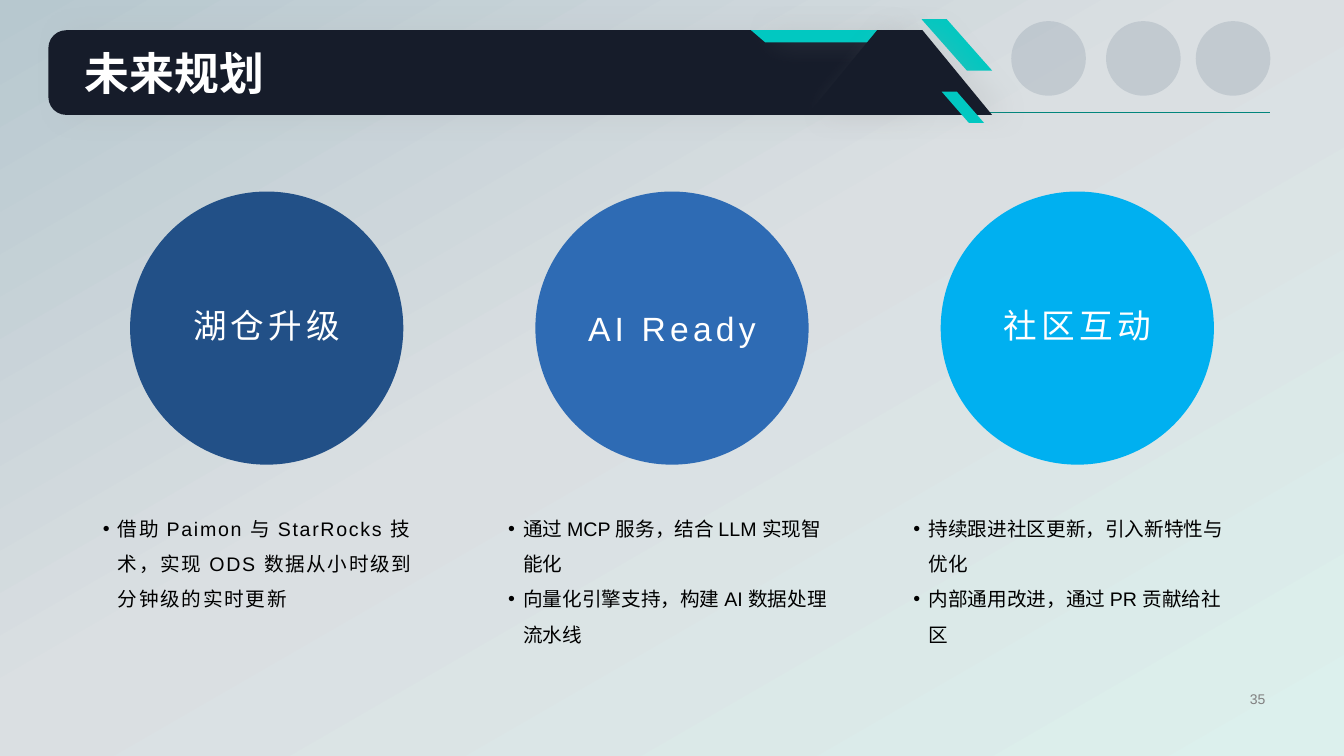
from copy import deepcopy
from pptx import Presentation, util as u
from pptx.dml.color import RGBColor
from pptx.enum import shapes as sh, text as tx
from pptx.oxml import parse_xml
from pptx.oxml.ns import nsdecls, qn

PX = 9144  # 100 px to the inch
DARK, TEAL, GREY = "161C2A", "01C8C1", "66788C"
rgb = RGBColor.from_string

deck = Presentation()
deck.slide_width, deck.slide_height = 1333 * PX, 750 * PX
slide = deck.slides.add_slide(deck.slide_layouts[6])
items = slide.shapes


def paint(shape, color, alpha=None, glow=False):
    """Fill a shape without outline, with optional opacity and soft shadow."""
    shape.shadow.inherit = False
    shape.line.fill.background()
    shape.fill.solid()
    shape.fill.fore_color.rgb = rgb(color)
    props = shape.element.spPr
    if alpha:
        tint = props.find(qn("a:solidFill"))[0]
        tint.append(parse_xml(f'<a:alpha {nsdecls("a")} val="{alpha * 1000}"/>'))
    if glow:
        props.find(qn("a:effectLst")).append(parse_xml(
            f'<a:outerShdw {nsdecls("a")} blurRad="254000" dist="127000" dir="0">'
            '<a:srgbClr val="A6A6A6"><a:alpha val="20000"/></a:srgbClr></a:outerShdw>'))


def write(lines, left, top, wide, high, size=14, color="000000", bold=False,
          align="LEFT", pad=5, gap=0, bullet=False, wrap=True, anchor="TOP"):
    frame = items.add_textbox(left * PX, top * PX, wide * PX, high * PX).text_frame
    frame.word_wrap = wrap
    frame.vertical_anchor = getattr(tx.MSO_ANCHOR, anchor)
    frame.margin_left = frame.margin_right = pad * PX
    frame.margin_top = frame.margin_bottom = pad * PX
    for i, line in enumerate(lines):
        para = frame.paragraphs[0] if i == 0 else frame.add_paragraph()
        para.alignment = getattr(tx.PP_ALIGN, align)
        if bullet:
            props = para._p.get_or_add_pPr()
            props.set("marL", str(15 * PX))
            props.set("indent", str(-15 * PX))
            props.append(parse_xml(f'<a:buFont {nsdecls("a")} typeface="Arial"/>'))
            props.append(parse_xml(f'<a:buChar {nsdecls("a")} char="•"/>'))
            para.line_spacing = 1.5
        run = para.add_run()
        run.text = line
        font = run.font
        font.name, font.size, font.bold = "Arial", u.Pt(size), bold
        font.color.rgb = rgb(color)
        if gap:
            run._r.get_or_add_rPr().set("spc", str(int(gap * 100)))


# Background
fill = slide.background.fill
fill.gradient()
fill.gradient_angle = 120
first = slide.element.find(".//" + qn("a:gs"))
first.addnext(deepcopy(first))
stops = [(0, "DCF0ED"), (0.53, "DADFE2"), (1, "B7C8CF")]
for stop, (place, color) in zip(fill.gradient_stops, stops):
    stop.position = place
    stop.color.rgb = rgb(color)

# Header
rule = items.add_connector(sh.MSO_CONNECTOR.STRAIGHT, 73 * PX, 112 * PX, 1260 * PX, 112 * PX)
rule.line.color.rgb = rgb("01857C")
rule.line.width = u.Pt(0.75)
rule.element.spPr.append(parse_xml(f'<a:effectLst {nsdecls("a")}/>'))

for left in (1003, 1097, 1186):
    dot = items.add_shape(sh.MSO_SHAPE.OVAL, left * PX, 21 * PX, 74 * PX, 74 * PX)
    paint(dot, GREY, alpha=20)

bar = items.add_shape(sh.MSO_SHAPE.ROUNDED_RECTANGLE, 48 * PX, 30 * PX, 845 * PX, 84 * PX)
bar.adjustments[0] = 0.21
paint(bar, DARK, glow=True)

shards = [
    ([(745, 30), (759, 42), (868, 42), (882, 30)], TEAL, True),
    ([(984, 70), (939, 19), (914, 19), (959, 70)], TEAL, False),
    ([(801, 114), (870, 30), (915, 30), (984, 114)], DARK, True),
    ([(976, 122), (949, 91), (934, 91), (961, 122)], TEAL, False),
]
for points, color, glow in shards:
    path = items.build_freeform(*points[0], scale=PX)
    path.add_line_segments(points[1:])
    paint(path.convert_to_shape(), color, glow=glow)

write(["未来规划"], 84, 45, 487, 63, size=32, color="FFFFFF", bold=True, pad=0)

# Three plans
plans = [
    ("湖仓升级", "225087", 298, 1.2,
     ["借助 Paimon 与 StarRocks 技术，实现 ODS 数据从小时级到分钟级的实时更新"]),
    ("AI Ready", "2E6BB4", 301, 0,
     ["通过 MCP 服务，结合 LLM 实现智能化", "向量化引擎支持，构建 AI 数据处理流水线"]),
    ("社区互动", "00B0F0", 298, 0,
     ["持续跟进社区更新，引入新特性与优化", "内部通用改进，通过 PR 贡献给社区"]),
]
for i, (name, color, top, gap, notes) in enumerate(plans):
    left = 129 + 402 * i
    disc = items.add_shape(sh.MSO_SHAPE.OVAL, left * PX, 190 * PX, 271 * PX, 271 * PX)
    paint(disc, color)
    write([name], left + 25, top, 221, 56, size=24, color="FFFFFF", align="CENTER", gap=3)
    write(notes, left - 32, 496, 334, 164, gap=gap, bullet=True)

write(["35"], 1233, 681, 27, 25, size=10, color="808080", align="RIGHT",
      wrap=False, anchor="MIDDLE")

deck.save("out.pptx")
